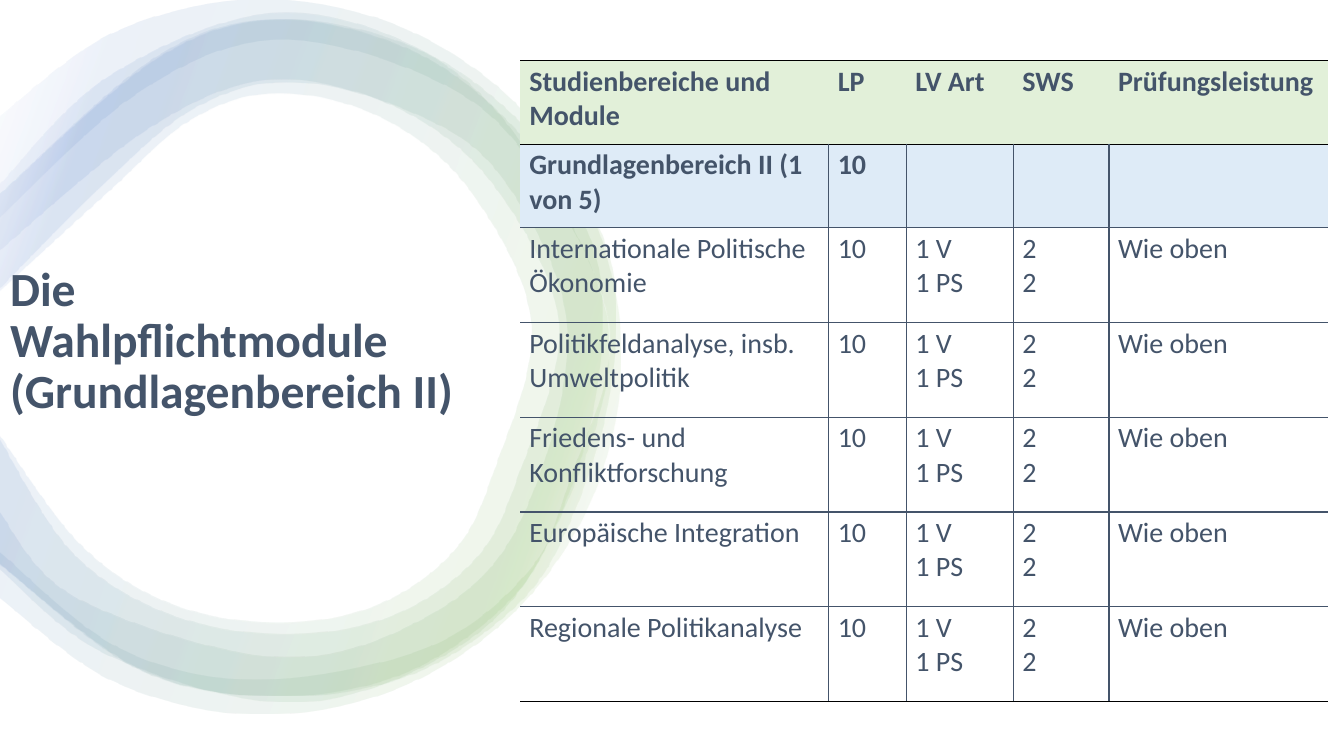
from math import cos, radians, sin

from pptx import Presentation
from pptx.dml.color import RGBColor
from pptx.enum.shapes import MSO_SHAPE
from pptx.enum.text import MSO_ANCHOR, PP_ALIGN
from pptx.oxml import parse_xml
from pptx.oxml.ns import nsdecls, qn
from pptx.util import Pt

RECTANGLE = MSO_SHAPE.RECTANGLE
TOP = MSO_ANCHOR.TOP
LEFT = PP_ALIGN.LEFT
PX = 9144  # EMU per px, 100 px to the inch

THEME = {
    "font": "Calibri",
    "title_size": 34,
    "table_size": 20,
    "text": "44546A",
    "frame": "000000",
    "paper": "FFFFFF",
    "header": "E2F0D9",
    "section": "DEEBF7",
    "ring_stops": [(2, "FFFFFF"), (16, "70AD47"), (85, "4472C4"), (100, "FFFFFF")],
    "ring_alpha": 10,
    "ring_angle": 200,
}

# Ring edges run clockwise (outer) or counter-clockwise (inner) from the left border.
soft_outer = [(-2, 185), (107, 76), (268, 13), (418, 50), (524, 153), (603, 330),
              (555, 512), (467, 632), (298, 696), (109, 650), (-2, 562)]
soft_inner = [(-2, 504), (74, 591), (265, 650), (405, 620), (509, 528), (562, 330),
              (497, 176), (402, 109), (270, 79), (148, 127), (-2, 250)]
wide_outer = [(-2, 194), (158, 56), (284, 19), (426, 54), (536, 143), (603, 253),
              (604, 387), (565, 515), (513, 598), (408, 668), (277, 690), (139, 663),
              (-2, 557)]
wide_inner = [(-2, 431), (71, 546), (165, 607), (277, 628), (385, 611), (469, 555),
              (512, 473), (553, 321), (489, 184), (396, 108), (284, 81), (191, 108),
              (101, 184), (-2, 288)]
narrow_outer = [(0.98 * x, y) for x, y in wide_outer]
narrow_inner = [(x if x < 0 else 13 + 0.93 * x, 354 + 0.96 * (y - 354))
                for x, y in wide_inner]
round_outer = [(261 + 354 * cos(radians(angle)), 354 + 354 * sin(radians(angle)))
               for angle in range(222, 499, 23)]
round_inner = [(-2, 545), (118, 642), (255, 673), (422, 642), (522, 567), (562, 480),
               (603, 323), (520, 154), (422, 76), (270, 40), (136, 93), (-2, 218)]
RINGS = [(soft_outer, soft_inner), (wide_outer, wide_inner),
         (narrow_outer, narrow_inner), (round_outer, round_inner)]

COLUMN_WIDTHS = [306, 77, 106, 95, 217]
ROW_HEIGHTS = [83] * 2 + [94] * 5
MODULES = [
    "Internationale Politische Ökonomie",
    "Politikfeldanalyse, insb. Umweltpolitik",
    "Friedens- und Konfliktforschung",
    "Europäische Integration",
    "Regionale Politikanalyse",
]
ROWS = [
    ["Studienbereiche und Module", "LP", "LV Art", "SWS", "Prüfungsleistung"],
    ["Grundlagenbereich II (1 von 5)", "10", "", "", ""],
] + [[module, "10", "1 V\n1 PS", "2\v2", "Wie oben"] for module in MODULES]


def smooth(anchors, steps=10):
    """Catmull-Rom curve through the px anchors, as EMU points."""
    padded = [anchors[0], *anchors, anchors[-1]]
    curve = []
    for corners in zip(padded, padded[1:], padded[2:], padded[3:]):
        for step in range(steps):
            t = step / steps
            curve.append(tuple(
                round(PX * (q + t * (r - p) / 2
                            + t * t * (2 * p - 5 * q + 4 * r - s) / 2
                            + t ** 3 * (3 * q - p - 3 * r + s) / 2))
                for p, q, r, s in zip(*corners)))
    return curve + [tuple(round(PX * value) for value in anchors[-1])]


def style_runs(text_frame, size, bold):
    for paragraph in text_frame.paragraphs:
        for run in paragraph.runs:
            run.font.name = THEME["font"]
            run.font.size = Pt(size)
            run.font.bold = bold
            run.font.color.rgb = RGBColor.from_string(THEME["text"])


prs = Presentation()
prs.slide_width, prs.slide_height = 1333 * PX, 750 * PX
slide = prs.slides.add_slide(prs.slide_layouts[5])
shapes = slide.shapes

backdrop = shapes.add_shape(RECTANGLE, 0, 0, prs.slide_width, prs.slide_height)
backdrop.shadow.inherit = False
backdrop.fill.solid()
backdrop.fill.fore_color.rgb = RGBColor.from_string(THEME["paper"])
backdrop.line.fill.background()

stops = "".join(
    f'<a:gs pos="{position * 1000}"><a:srgbClr val="{color}">'
    f'<a:alpha val="{THEME["ring_alpha"] * 1000}"/></a:srgbClr></a:gs>'
    for position, color in THEME["ring_stops"])
for outer_edge, inner_edge in RINGS:
    start, *rest = smooth(outer_edge) + smooth(inner_edge)
    outline = shapes.build_freeform(*start, scale=1.0)
    outline.add_line_segments(rest, close=True)
    ring = outline.convert_to_shape()
    ring.shadow.inherit = False
    ring.line.fill.background()
    ring.fill.gradient()
    gradient = ring._element.spPr.find(qn("a:gradFill"))
    gradient.getparent().replace(gradient, parse_xml(
        f'<a:gradFill {nsdecls("a")} rotWithShape="1"><a:gsLst>{stops}</a:gsLst>'
        f'<a:lin ang="{THEME["ring_angle"] * 60000}" scaled="0"/></a:gradFill>'))

title = shapes.title
shapes._spTree.append(title._element)  # in front of the rings
title.left, title.top, title.width, title.height = 0, 258 * PX, 470 * PX, 233 * PX
heading = title.text_frame
heading.text = "Die Wahlpflichtmodule \v(Grundlagenbereich II)"
heading.word_wrap = True
heading.vertical_anchor = TOP
heading.margin_left, heading.margin_right = 10 * PX, 17 * PX
heading.paragraphs[0].alignment = LEFT
heading.paragraphs[0].line_spacing = 0.9
style_runs(heading, THEME["title_size"], True)

table = shapes.add_table(len(ROWS), len(COLUMN_WIDTHS), 516 * PX, 60 * PX,
                         sum(COLUMN_WIDTHS) * PX, sum(ROW_HEIGHTS) * PX).table
table.first_row = table.horz_banding = False
for column, width in zip(table.columns, COLUMN_WIDTHS):
    column.width = width * PX
for row, height in zip(table.rows, ROW_HEIGHTS):
    row.height = height * PX

last_row, last_column = len(ROWS) - 1, len(COLUMN_WIDTHS) - 1
row_fills = {0: THEME["header"], 1: THEME["section"]}
for r, row in enumerate(ROWS):
    for c, entry in enumerate(row):
        cell = table.cell(r, c)
        cell.text_frame.text = entry
        cell.margin_left = cell.margin_right = 9 * PX
        cell.margin_top = cell.margin_bottom = 4 * PX
        style_runs(cell.text_frame, THEME["table_size"], r in row_fills)
        borders = {
            "lnL": THEME["text"] if r > 0 and c > 0 else None,
            "lnR": THEME["text"] if r > 0 and c < last_column else None,
            "lnT": THEME["frame"] if r <= 1 else THEME["text"],
            "lnB": THEME["frame"] if r in (0, last_row) else THEME["text"],
        }
        for side, color in borders.items():
            paint = (f'<a:solidFill><a:srgbClr val="{color}"/></a:solidFill>'
                     if color else "<a:noFill/>")
            cell._tc.get_or_add_tcPr().append(parse_xml(
                f'<a:{side} {nsdecls("a")} w="{Pt(1)}">{paint}</a:{side}>'))
        if r in row_fills:
            cell.fill.solid()
            cell.fill.fore_color.rgb = RGBColor.from_string(row_fills[r])
        else:
            cell.fill.background()

prs.save("out.pptx")
